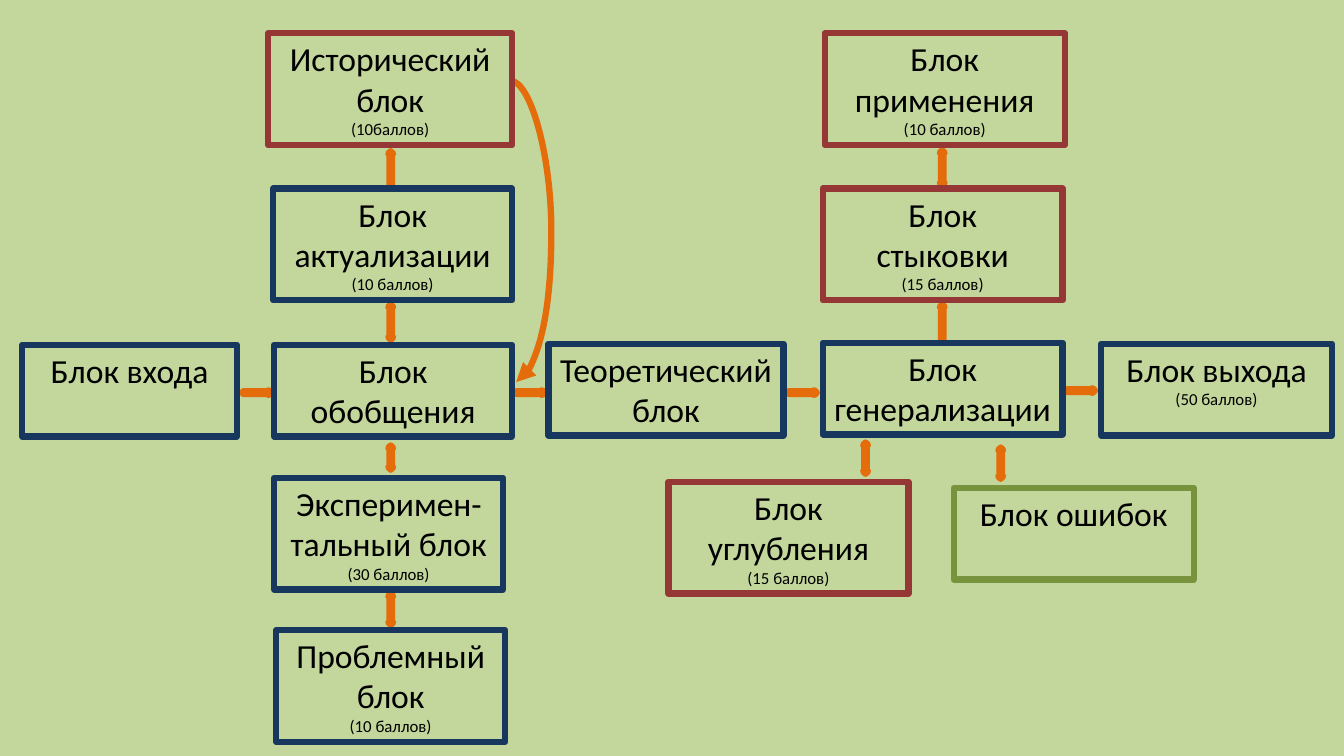
from lxml.etree import SubElement
from pptx import Presentation
from pptx.dml.color import RGBColor
from pptx.enum.shapes import MSO_CONNECTOR as Connector, MSO_SHAPE as Shape
from pptx.enum.text import MSO_AUTO_SIZE as AutoSize, PP_ALIGN as Align
from pptx.oxml.ns import qn
from pptx.util import Inches, Pt

NAVY, RED, GREEN = "17375E", "953735", "77933C"
ORANGE, BLUE = "E46C0A", "4F81BD"

BLOCKS = [
    (8.18, 0.33, 2.38, 1.11, RED, ["Блок применения"], "(10 баллов)"),
    (6.63, 4.78, 2.38, 1.11, RED, ["Блок углубления"], "(15 баллов)"),
    (9.46, 4.84, 2.38, 0.91, GREEN, ["Блок ошибок"], None),
    (0.22, 3.42, 2.13, 0.91, NAVY, ["Блок входа"], None),
    (5.44, 3.41, 2.33, 0.91, NAVY, ["Теоретический блок"], None),
    (10.92, 3.41, 2.29, 0.91, NAVY, ["Блок выхода"], "(50 баллов)"),
    (2.71, 1.87, 2.37, 1.11, NAVY, ["Блок актуализации"], "(10 баллов)"),
    (2.66, 0.33, 2.42, 1.11, RED, ["Исторический блок"], "(10баллов)"),
    (2.74, 6.25, 2.27, 1.11, NAVY, ["Проблемный блок"], "(10 баллов)"),
    (8.16, 3.4, 2.38, 0.91, NAVY, ["Блок генерализации"], None),
    (8.16, 1.87, 2.38, 1.11, RED, ["Блок", "стыковки"], "(15 баллов)"),
    (2.72, 4.74, 2.27, 1.11, NAVY, ["Эксперимен-тальный блок"], "(30 баллов)"),
    (2.72, 3.42, 2.36, 0.91, NAVY, ["Блок обобщения"], None),
]
RIGHT_ARROWS = [(2.41, 3.87), (5.12, 3.87), (7.82, 3.87), (10.58, 3.85)]
VERTICAL_ARROWS = [
    (Shape.UP_ARROW, 3.85, 1.5, 0.35),
    (Shape.UP_DOWN_ARROW, 3.85, 3.02, 0.35),
    (Shape.UP_DOWN_ARROW, 3.85, 4.42, 0.24),
    (Shape.UP_DOWN_ARROW, 3.85, 5.89, 0.31),
    (Shape.UP_DOWN_ARROW, 9.32, 1.49, 0.35),
    (Shape.UP_ARROW, 9.32, 3.02, 0.35),
    (Shape.UP_DOWN_ARROW, 8.56, 4.39, 0.31),
    (Shape.UP_DOWN_ARROW, 9.9, 4.44, 0.31),
]


def rgb(value):
    return RGBColor.from_string(value)


def apply(target, values):
    for name, value in values.items():
        setattr(target, name, value)


class BlockDiagram:
    """Draws blocks and arrows in one style on the current slide."""

    line_width = Pt(4.5)
    arrow_thickness = 0.05
    frame_format = {"word_wrap": True, "auto_size": AutoSize.SHAPE_TO_FIT_TEXT}
    title_font = {"name": "Calibri", "size": Pt(24)}
    score_font = {"name": "Calibri", "size": Pt(12)}

    def __init__(self, slide, background):
        self.slide = slide
        slide.background.fill.solid()
        slide.background.fill.fore_color.rgb = rgb(background)

    def outline(self, shape, color):
        shape.line.color.rgb = rgb(color)
        shape.line.width = self.line_width

    def block(self, left, top, width, height, color, titles, score):
        shape = self.slide.shapes.add_textbox(*map(Inches, (left, top, width, height)))
        self.outline(shape, color)
        frame = shape.text_frame
        apply(frame, self.frame_format)
        lines = [(title, self.title_font) for title in titles]
        if score:
            lines.append((score, self.score_font))
        for index, (text, font) in enumerate(lines):
            paragraph = frame.add_paragraph() if index else frame.paragraphs[0]
            apply(paragraph, {"text": text, "alignment": Align.CENTER})
            run = paragraph.runs[0]
            apply(run.font, font)
            run.font.color.rgb = rgb("000000")

    def arrow(self, kind, left, top, width, height, fill):
        shape = self.slide.shapes.add_shape(kind, *map(Inches, (left, top, width, height)))
        shape.shadow.inherit = False
        shape.fill.solid()
        shape.fill.fore_color.rgb = rgb(fill)
        self.outline(shape, ORANGE)

    def right_arrow(self, left, top):
        self.arrow(Shape.RIGHT_ARROW, left, top, 0.28, self.arrow_thickness, ORANGE)

    def vertical_arrow(self, kind, left, top, height):
        self.arrow(kind, left, top, self.arrow_thickness, height, BLUE)

    def curve(self, start, end, bulge):
        connector = self.slide.shapes.add_connector(
            Connector.CURVE, *map(Inches, start + end))
        self.outline(connector, ORANGE)
        properties = connector._element.spPr
        adjustments = properties.find(qn("a:prstGeom")).get_or_add_avLst()
        ratio = (bulge - start[0]) / (end[0] - start[0])
        SubElement(adjustments, qn("a:gd"), name="adj1", fmla=f"val {round(ratio * 100000)}")
        SubElement(properties.find(qn("a:ln")), qn("a:tailEnd"), type="triangle")
        SubElement(properties, qn("a:effectLst"))


def main():
    presentation = Presentation()
    apply(presentation, {"slide_width": Inches(13.33), "slide_height": Inches(7.5)})
    slide = presentation.slides.add_slide(presentation.slide_layouts[6])
    diagram = BlockDiagram(slide, "C3D69B")
    for position in RIGHT_ARROWS:
        diagram.right_arrow(*position)
    for arrow in VERTICAL_ARROWS:
        diagram.vertical_arrow(*arrow)
    diagram.curve((5.06, 0.8), (5.12, 3.79), 5.47)
    for block in BLOCKS:
        diagram.block(*block)
    presentation.save("out.pptx")


if __name__ == "__main__":
    main()
